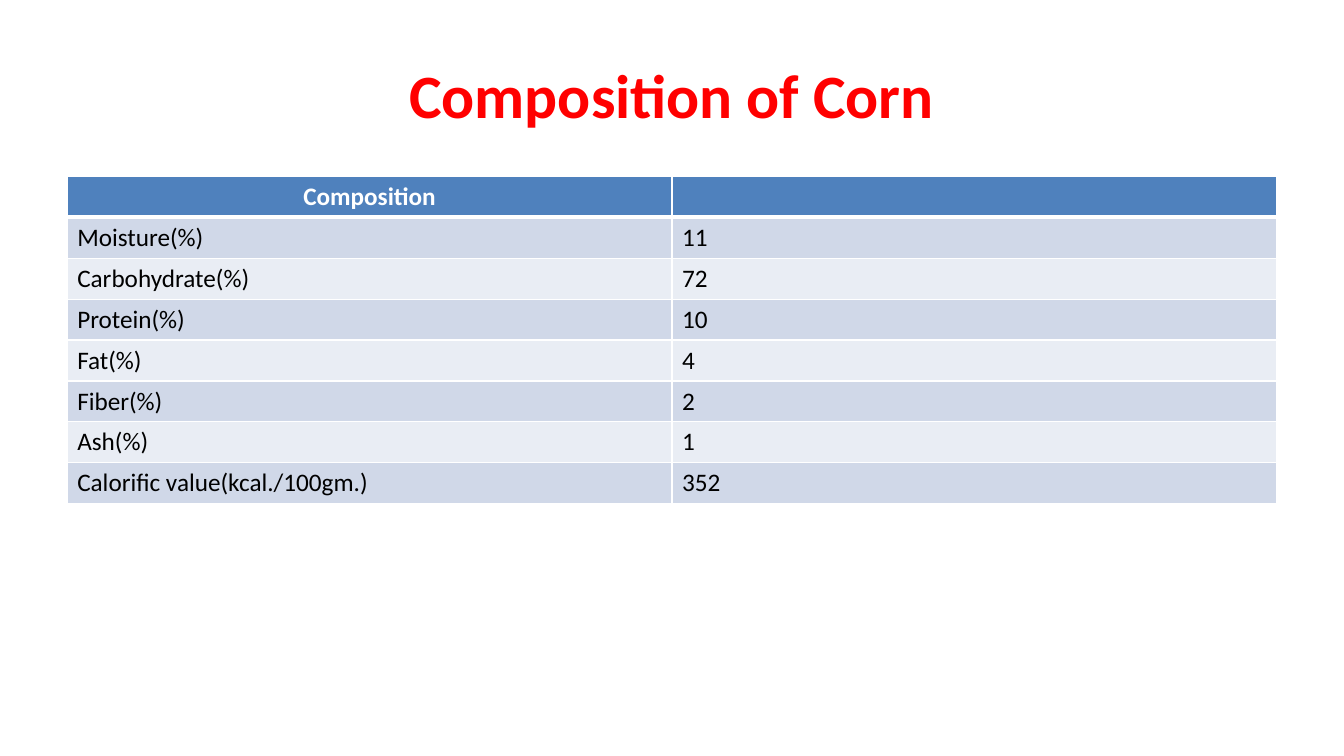
"""Build a slide with a table of the composition of corn."""
import pptx
import pptx.dml.color
import pptx.enum.text
import pptx.oxml
import pptx.oxml.ns
import pptx.util

EMU_PER_PX = 9525
ROWS = [
    ("Composition", ""),
    ("Moisture(%)", "11"),
    ("Carbohydrate(%)", "72"),
    ("Protein(%)", "10"),
    ("Fat(%)", "4"),
    ("Fiber(%)", "2"),
    ("Ash(%)", "1"),
    ("Calorific value(kcal./100gm.)", "352"),
]


def px(length):
    return pptx.util.Emu(length * EMU_PER_PX)


def color(value):
    return pptx.dml.color.RGBColor.from_string(value)


def write_text(frame, text, size=18, fill="000000", bold=False, centered=False):
    para = frame.paragraphs[0]
    align = pptx.enum.text.PP_ALIGN
    para.alignment = align.CENTER if centered else align.LEFT
    para.font.size = pptx.util.Pt(size)
    if text:
        span = para.add_run()
        span.text = text
        span.font.name = "Calibri"
        span.font.size = pptx.util.Pt(size)
        span.font.bold = bold
        span.font.color.rgb = color(fill)


class CornSlide:
    title_color = "FF0000"
    header_fill = "4F81BD"
    band_fills = ("D0D8E8", "E9EDF4")
    white = "FFFFFF"

    def __init__(self, deck):
        self.page = deck.slides.add_slide(deck.slide_layouts[5])

    def title(self, text, left, top, width, height):
        box = self.page.shapes.title
        box.left, box.top, box.width, box.height = map(px, (left, top, width, height))
        frame = box.text_frame
        frame.word_wrap = True
        frame.vertical_anchor = pptx.enum.text.MSO_ANCHOR.MIDDLE
        write_text(frame, text, size=44, fill=self.title_color, bold=True, centered=True)

    def borders(self, cell, **widths):
        properties = cell._tc.get_or_add_tcPr()
        namespace = pptx.oxml.ns.nsdecls("a")
        for place, side in enumerate("LRTB"):
            width = pptx.util.Pt(widths.get(side, 1))
            line = pptx.oxml.parse_xml(
                f'<a:ln{side} {namespace} w="{width}"><a:solidFill>'
                f'<a:srgbClr val="{self.white}"/></a:solidFill></a:ln{side}>'
            )
            properties.insert(place, line)

    def table(self, rows, left, top, width, row_height):
        columns = len(rows[0])
        frame = self.page.shapes.add_table(
            len(rows), columns, px(left), px(top), px(width), px(row_height * len(rows))
        )
        table = frame.table
        for row, texts in enumerate(rows):
            header = row == 0
            for column, text in enumerate(texts):
                cell = table.cell(row, column)
                write_text(
                    cell.text_frame,
                    text,
                    fill=self.white if header else "000000",
                    bold=header,
                    centered=header,
                )
                cell.fill.solid()
                band = self.band_fills[(row - 1) % 2]
                cell.fill.fore_color.rgb = color(self.header_fill if header else band)
                self.borders(cell, T=3 if row == 1 else 1, B=3 if header else 1)


def main():
    deck = pptx.Presentation()
    deck.slide_width, deck.slide_height = px(1280), px(720)
    slide = CornSlide(deck)
    slide.title("Composition of Corn", 64, 29, 1152, 120)
    slide.table(ROWS, 64, 168, 1152, 39)
    deck.save("out.pptx")


if __name__ == "__main__":
    main()
